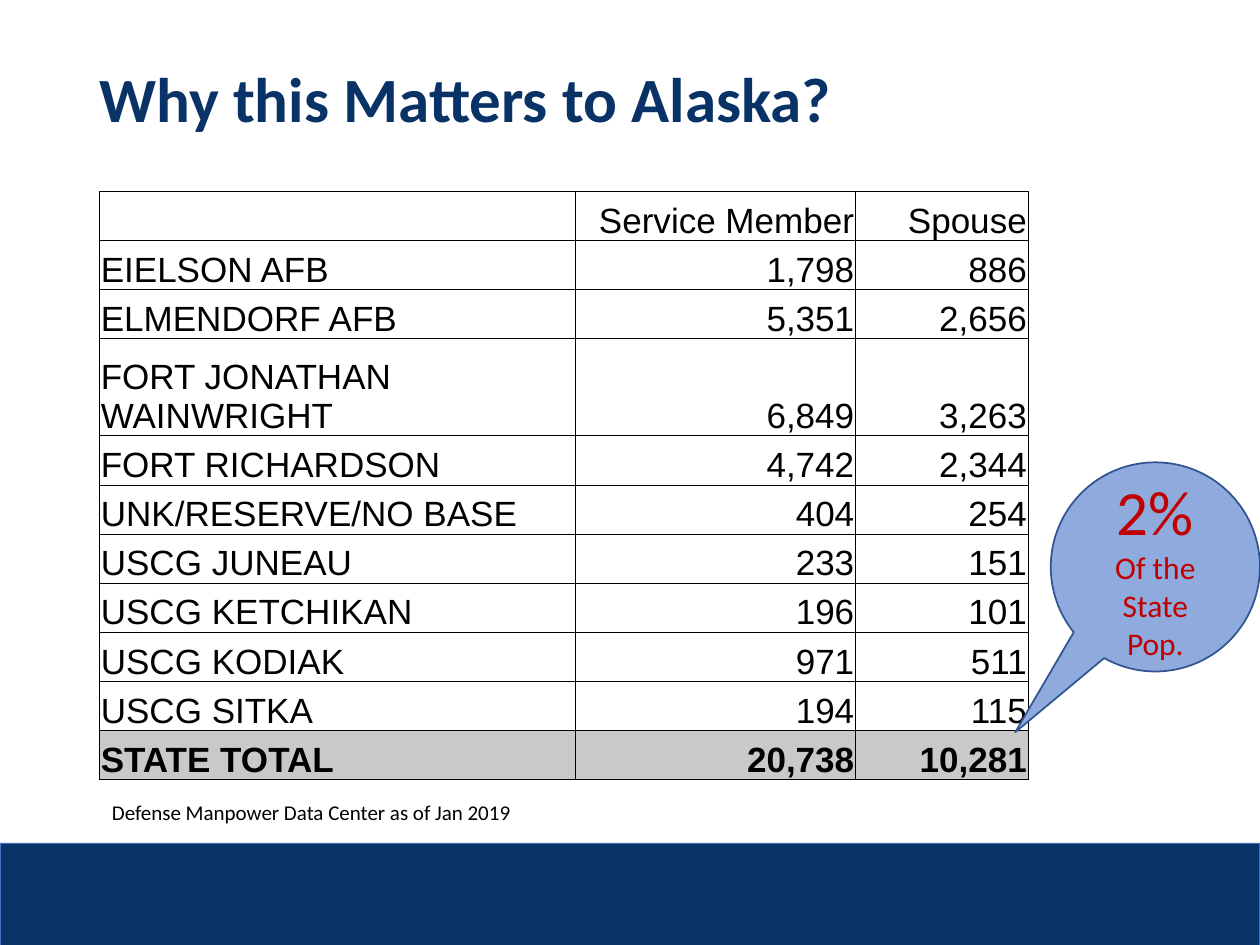
from typing import NamedTuple

from lxml import etree
from pptx import Presentation
from pptx.dml.color import RGBColor
from pptx.enum import shapes, text
from pptx.oxml import ns
from pptx.util import Inches, Pt

NAVY = RGBColor(0x09, 0x32, 0x66)
BAR_EDGE = RGBColor(0x44, 0x72, 0xC4)
BLACK = RGBColor(0, 0, 0)
GREY = RGBColor(0xC9, 0xC9, 0xC9)
LIGHT_BLUE = RGBColor(0x8F, 0xAA, 0xDC)
BUBBLE_EDGE = RGBColor(0x32, 0x54, 0x91)
RED = RGBColor(0xC0, 0, 0)


class Box(NamedTuple):
    left: float
    top: float
    width: float
    height: float

    def lengths(self) -> list:
        return [Inches(value) for value in self]


class Row(NamedTuple):
    base: str
    members: str
    spouses: str
    height: float = 0.39


ROWS = [
    Row("", "Service Member", "Spouse"),
    Row("EIELSON AFB", "1,798", "886"),
    Row("ELMENDORF AFB", "5,351", "2,656"),
    Row("FORT JONATHAN WAINWRIGHT", "6,849", "3,263", 0.77),
    Row("FORT RICHARDSON", "4,742", "2,344"),
    Row("UNK/RESERVE/NO BASE", "404", "254"),
    Row("USCG JUNEAU", "233", "151"),
    Row("USCG KETCHIKAN", "196", "101"),
    Row("USCG KODIAK", "971", "511"),
    Row("USCG SITKA", "194", "115"),
    Row("STATE TOTAL", "20,738", "10,281"),
]
COLUMN_WIDTHS = [3.78, 2.22, 1.37]


def style_font(paragraph, size: float, color: RGBColor, name: str = "Calibri", bold: bool = False) -> None:
    # An empty paragraph has no run, so its own font sets the line height.
    for target in paragraph.runs or [paragraph]:
        font = target.font
        font.name, font.size, font.bold = name, Pt(size), bold
        font.color.rgb = color


def add_label(slide, box: Box, label: str, size: float, color: RGBColor, bold: bool = False):
    frame = slide.shapes.add_textbox(*box.lengths()).text_frame
    frame.text = label
    style_font(frame.paragraphs[0], size, color, bold=bold)
    return frame


def add_filled_shape(slide, kind, box: Box, fill: RGBColor, edge: RGBColor, edge_width: float):
    shape = slide.shapes.add_shape(kind, *box.lengths())
    shape.shadow.inherit = False
    shape.fill.solid()
    shape.fill.fore_color.rgb = fill
    shape.line.color.rgb = edge
    shape.line.width = Pt(edge_width)
    return shape


def add_borders(cell, color: RGBColor, width: float) -> None:
    properties = cell._tc.get_or_add_tcPr()
    for side in ("a:lnL", "a:lnR", "a:lnT", "a:lnB"):
        line = etree.SubElement(properties, ns.qn(side), w=str(Pt(width)))
        fill = etree.SubElement(line, ns.qn("a:solidFill"))
        etree.SubElement(fill, ns.qn("a:srgbClr"), val=str(color))


def fill_cell(cell, value: str, is_number: bool, is_total: bool) -> None:
    cell.margin_left = cell.margin_right = cell.margin_top = Inches(0.01)
    cell.margin_bottom = 0
    cell.vertical_anchor = text.MSO_ANCHOR.BOTTOM
    add_borders(cell, BLACK, 0.5)
    if is_total:
        cell.fill.solid()
        cell.fill.fore_color.rgb = GREY
    else:
        cell.fill.background()
    cell.text_frame.text = value
    paragraph = cell.text_frame.paragraphs[0]
    paragraph.alignment = text.PP_ALIGN.RIGHT if is_number else text.PP_ALIGN.LEFT
    style_font(paragraph, 20, BLACK, "Arial", is_total)


def add_population_table(slide) -> None:
    box = Box(0.79, 1.52, sum(COLUMN_WIDTHS), sum(row.height for row in ROWS))
    table = slide.shapes.add_table(len(ROWS), len(COLUMN_WIDTHS), *box.lengths()).table
    table.first_row = table.horz_banding = False
    for column, width in zip(table.columns, COLUMN_WIDTHS):
        column.width = Inches(width)
    for row_index, row in enumerate(ROWS):
        table.rows[row_index].height = Inches(row.height)
        for column_index, value in enumerate((row.base, row.members, row.spouses)):
            fill_cell(table.cell(row_index, column_index), value,
                      column_index > 0, row_index == len(ROWS) - 1)


def add_share_callout(slide) -> None:
    callout = add_filled_shape(slide, shapes.MSO_SHAPE.OVAL_CALLOUT, Box(8.34, 3.67, 1.66, 1.66),
                               LIGHT_BLUE, BUBBLE_EDGE, 1)
    callout.adjustments[0], callout.adjustments[1] = -0.67, 0.79
    frame = callout.text_frame
    frame.word_wrap = True
    frame.vertical_anchor = text.MSO_ANCHOR.MIDDLE
    frame.text = "2%\nOf the State Pop."
    for paragraph, size in zip(frame.paragraphs, (36, 18)):
        paragraph.alignment = text.PP_ALIGN.CENTER
        style_font(paragraph, size, RED)


def main() -> None:
    presentation = Presentation()
    presentation.slide_width, presentation.slide_height = Inches(10), Inches(7.5)
    slide = presentation.slides.add_slide(presentation.slide_layouts[6])

    add_filled_shape(slide, shapes.MSO_SHAPE.RECTANGLE, Box(0, 6.69, 10, 0.81), NAVY, BAR_EDGE, 0.5)
    title = add_label(slide, Box(0.69, 0.22, 8.62, 1.18), "Why this Matters to Alaska?", 36, NAVY, True)
    title.word_wrap = True
    title.vertical_anchor = text.MSO_ANCHOR.MIDDLE
    title.paragraphs[0].line_spacing = 0.9
    add_population_table(slide)
    add_share_callout(slide)
    source = add_label(slide, Box(0.79, 6.3, 3.4, 0.3), "Defense Manpower Data Center as of Jan 2019", 12, BLACK)
    source.word_wrap = False
    source.auto_size = text.MSO_AUTO_SIZE.SHAPE_TO_FIT_TEXT

    presentation.save("out.pptx")


if __name__ == "__main__":
    main()
